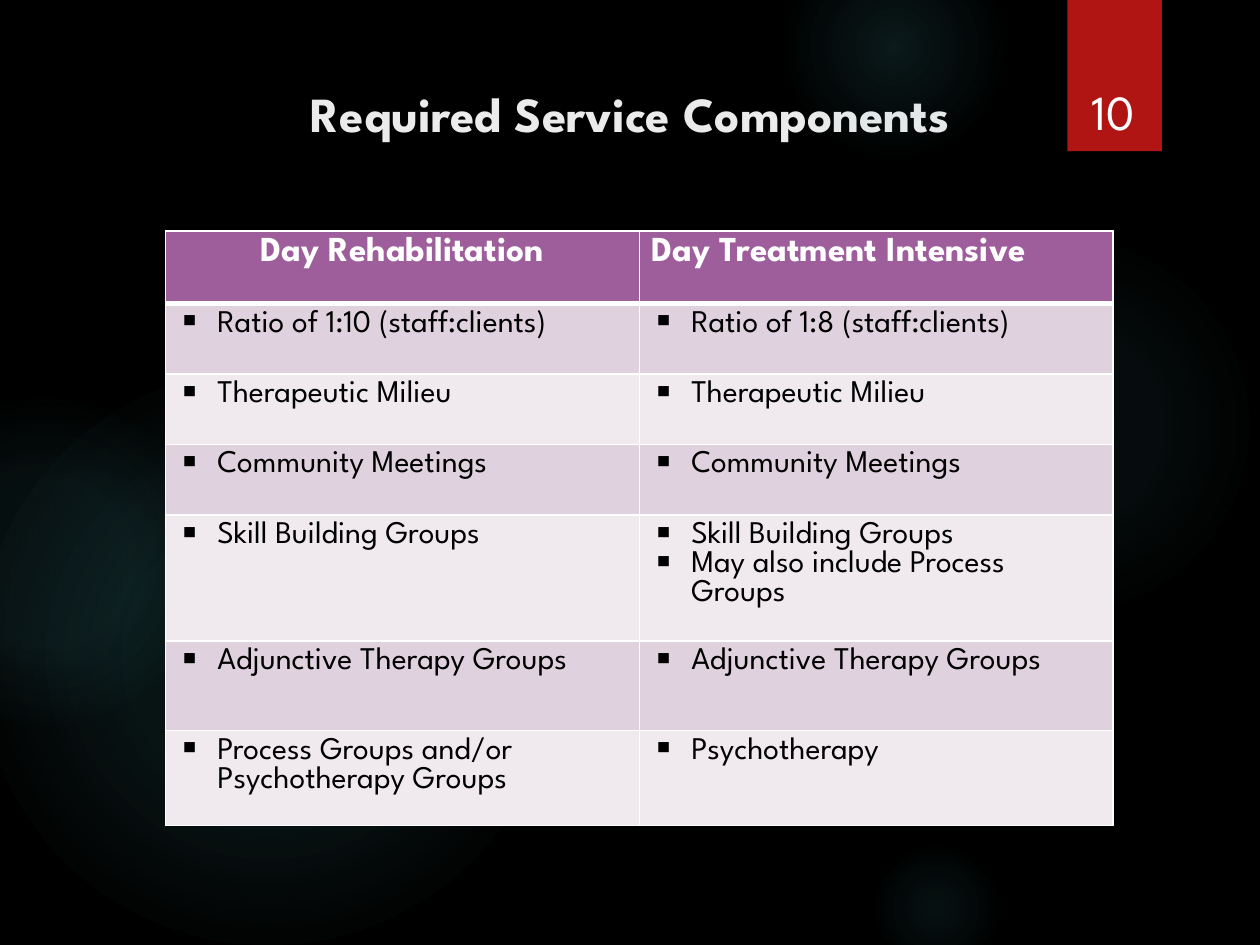
from lxml import etree
from pptx import Presentation
from pptx.dml.color import RGBColor
from pptx.enum.shapes import MSO_SHAPE
from pptx.enum.text import MSO_ANCHOR, PP_ALIGN
from pptx.oxml import parse_xml
from pptx.oxml.ns import nsdecls, qn
from pptx.util import Pt

OVAL, RECTANGLE = MSO_SHAPE.OVAL, MSO_SHAPE.RECTANGLE
LEFT, CENTER = PP_ALIGN.LEFT, PP_ALIGN.CENTER
TOP, BOTTOM = MSO_ANCHOR.TOP, MSO_ANCHOR.BOTTOM

BLACK = RGBColor(0x00, 0x00, 0x00)
WHITE = RGBColor(0xFF, 0xFF, 0xFF)
OFF_WHITE = RGBColor(0xEB, 0xEB, 0xEB)
TEAL = RGBColor(0x50, 0xB9, 0xC1)
RED = RGBColor(0xB0, 0x15, 0x13)
PURPLE = RGBColor(0x9E, 0x5E, 0x9B)
DARK_BAND = RGBColor(0xDF, 0xD2, 0xDE)
LIGHT_BAND = RGBColor(0xF0, 0xEA, 0xEF)
FONT = "League Spartan"
INDENT = Pt(22.5)


def write_text(frame, text, size, color, bold=False, align=LEFT, bullet=None):
    """Fill a text frame, one paragraph for each line of text."""
    frame.word_wrap = True
    for number, line in enumerate(text.split("\n")):
        para = frame.add_paragraph() if number else frame.paragraphs[0]
        para.alignment = align
        span = para.add_run()
        span.text = line
        span.font.name, span.font.size = FONT, Pt(size)
        span.font.bold, span.font.color.rgb = bold, color
        if bullet:
            properties = para._p.get_or_add_pPr()
            properties.set("marL", str(INDENT))
            properties.set("indent", str(-INDENT))
            etree.SubElement(properties, qn("a:buChar")).set("char", bullet)


deck = Presentation()
deck.slide_width, deck.slide_height = Pt(720), Pt(540)
page = deck.slides.add_slide(deck.slide_layouts[5])
page.background.fill.solid()
page.background.fill.fore_color.rgb = BLACK

# Soft glows: left, top, diameter, then (position, opacity) stops in percent
glows = [
    (496, 132, 222, [(0, 7), (36, 6), (69, 0)]),
    (448, -36, 126, [(0, 14), (36, 7), (73, 0)]),
    (496, 480, 78, [(0, 9), (36, 5), (66, 0)]),
    (-12, 210, 330, [(0, 11), (36, 10), (75, 0)]),
    (-66, 228, 186, [(0, 8), (36, 8), (72, 0)]),
]
for left, top, diameter, stops in glows:
    glow = page.shapes.add_shape(OVAL, Pt(left), Pt(top), Pt(diameter), Pt(diameter))
    glow.shadow.inherit = False
    glow.line.fill.background()
    glow.fill.background()
    stop_xml = "".join(
        f'<a:gs pos="{position * 1000}"><a:srgbClr val="{TEAL}">'
        f'<a:alpha val="{opacity * 1000}"/></a:srgbClr></a:gs>'
        for position, opacity in stops
    )
    gradient = parse_xml(
        f'<a:gradFill {nsdecls("a")} rotWithShape="1"><a:gsLst>{stop_xml}</a:gsLst>'
        '<a:path path="circle"><a:fillToRect l="50000" t="50000" r="50000" b="50000"/>'
        "</a:path></a:gradFill>"
    )
    properties = glow._element.spPr
    properties.replace(properties.find(qn("a:noFill")), gradient)

# Page number on its red tab
tab = page.shapes.add_shape(RECTANGLE, Pt(610), Pt(0), Pt(54), Pt(86.4))
tab.shadow.inherit = False
tab.fill.solid()
tab.fill.fore_color.rgb = RED
tab.line.fill.background()
number_box = page.shapes.add_textbox(Pt(611.5), Pt(23), Pt(49.5), Pt(60.5))
number_box.text_frame.vertical_anchor = BOTTOM
write_text(number_box.text_frame, "10", size=28, color=WHITE, align=CENTER)

# Title
title = page.shapes.title
title.left, title.top, title.width, title.height = Pt(82), Pt(36), Pt(556), Pt(60.5)
title.text_frame.vertical_anchor = TOP
title.text_frame.margin_top = Pt(12)
write_text(title.text_frame, "Required Service Components",
           size=28, color=OFF_WHITE, bold=True, align=CENTER)

# Service table
rows = [
    ("Day Rehabilitation", "Day Treatment Intensive"),
    ("Ratio of 1:10 (staff:clients)", "Ratio of 1:8 (staff:clients)"),
    ("Therapeutic Milieu", "Therapeutic Milieu"),
    ("Community Meetings", "Community Meetings"),
    ("Skill Building Groups", "Skill Building Groups\nMay also include Process Groups"),
    ("Adjunctive Therapy Groups", "Adjunctive Therapy Groups"),
    ("Process Groups and/or Psychotherapy Groups", "Psychotherapy"),
]
row_heights = [41.5, 40.3, 40.3, 40.3, 69.8, 51.2, 54]
table = page.shapes.add_table(len(rows), 2, Pt(94.5), Pt(132), Pt(541.6),
                              Pt(sum(row_heights))).table
for column in table.columns:
    column.width = Pt(270.8)

for row_index, (texts, height) in enumerate(zip(rows, row_heights)):
    table.rows[row_index].height = Pt(height)
    for column_index, text in enumerate(texts):
        cell = table.cell(row_index, column_index)
        cell.fill.solid()
        if row_index == 0:
            cell.fill.fore_color.rgb = PURPLE
            write_text(cell.text_frame, text, size=20, color=WHITE, bold=True,
                       align=LEFT if column_index else CENTER)
        else:
            cell.fill.fore_color.rgb = DARK_BAND if row_index % 2 else LIGHT_BAND
            write_text(cell.text_frame, text, size=18, color=BLACK, bullet="▪")

        # White borders, heavier between header and body
        widths = {"L": 1, "R": 1, "T": 3 if row_index == 1 else 1,
                  "B": 3 if row_index == 0 else 1}
        for position, (side, width) in enumerate(widths.items()):
            border = parse_xml(
                f'<a:ln{side} {nsdecls("a")} w="{Pt(width)}"><a:solidFill>'
                f'<a:srgbClr val="{WHITE}"/></a:solidFill></a:ln{side}>'
            )
            cell._tc.get_or_add_tcPr().insert(position, border)

deck.save("out.pptx")
